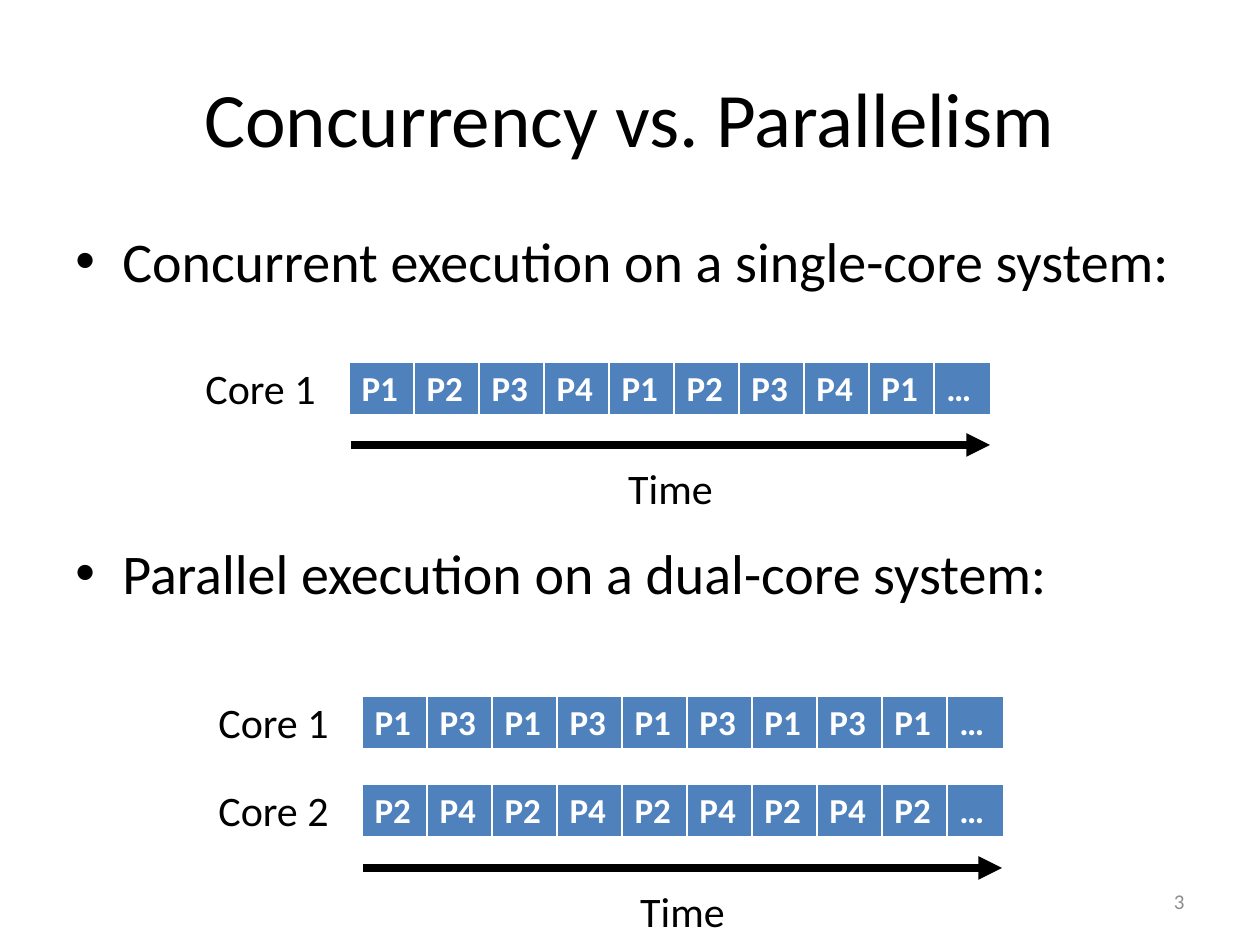
from lxml import etree
from pptx import Presentation
from pptx import util as u
from pptx.dml.color import RGBColor
from pptx.enum import shapes, text
from pptx.oxml import ns

BLACK = RGBColor(0, 0, 0)
WHITE = RGBColor(255, 255, 255)
GREY = RGBColor(0x8C, 0x8C, 0x8C)
BLUE = RGBColor(0x4F, 0x81, 0xBD)
LEFT, MID, RIGHT = text.PP_ALIGN.LEFT, text.PP_ALIGN.CENTER, text.PP_ALIGN.RIGHT
TOP, HALF = text.MSO_ANCHOR.TOP, text.MSO_ANCHOR.MIDDLE


def px(n):
    return u.Emu(round(n * 914400 / 126))


def write(frame, lines, size=24, color=BLACK, bold=False, align=LEFT, anchor=TOP, wrap=True):
    frame.word_wrap = wrap
    frame.vertical_anchor = anchor
    for i, line in enumerate(lines.split("\n")):
        para = frame.add_paragraph() if i else frame.paragraphs[0]
        para.alignment = align
        run = para.add_run()
        run.text = line
        run.font.name = "Calibri"
        run.font.size = u.Pt(size)
        run.font.bold = bold
        run.font.color.rgb = color


deck = Presentation()
deck.slide_width, deck.slide_height = px(1260), px(945)
slide = deck.slides.add_slide(deck.slide_layouts[6])
items = slide.shapes

title = items.add_textbox(px(63), px(38), px(1134), px(157))
write(title.text_frame, "Concurrency vs. Parallelism", size=44, align=MID, anchor=HALF)

body = items.add_textbox(px(63), px(220), px(1134), px(624))
write(body.text_frame, "Concurrent execution on a single-core system:\n"
      "Parallel execution on a dual-core system:", size=32)
for para, gap in zip(body.text_frame.paragraphs, (6, 140)):
    para.space_before = u.Pt(gap)
    prop = para._p.get_or_add_pPr()
    prop.set("marL", str(px(47)))
    prop.set("indent", str(-px(47)))
    etree.SubElement(prop, ns.qn("a:buFont"), typeface="Arial")
    etree.SubElement(prop, ns.qn("a:buChar"), char="•")

page = items.add_textbox(px(903), px(876), px(294), px(50))
write(page.text_frame, "3", size=12, color=GREY, align=RIGHT, anchor=HALF)

rows = [
    ("Core 1", 349, 362, "P1 P2 P3 P4 P1 P2 P3 P4 P1 …"),
    ("Core 1", 362, 696, "P1 P3 P1 P3 P1 P3 P1 P3 P1 …"),
    ("Core 2", 362, 784, "P2 P4 P2 P4 P2 P4 P2 P4 P2 …"),
]
for core, x, y, jobs in rows:
    label = items.add_textbox(px(x - 156), px(y - 6), px(136), px(63))
    write(label.text_frame, core, wrap=False)
    jobs = jobs.split()
    grid = items.add_table(1, len(jobs), px(x), px(y), px(642), px(52)).table
    grid.horz_banding = False
    for i, job in enumerate(jobs):
        grid.columns[i].width = px(57 if job == "…" else 65)
        cell = grid.cell(0, i)
        cell.fill.solid()
        cell.fill.fore_color.rgb = BLUE
        write(cell.text_frame, job, size=20, color=WHITE, bold=True)
        prop = cell._tc.get_or_add_tcPr()
        for k, (side, wide) in enumerate((("L", 1), ("R", 1), ("T", 1), ("B", 3))):
            edge = etree.Element(ns.qn("a:ln" + side), w=str(u.Pt(wide)))
            fill = etree.SubElement(edge, ns.qn("a:solidFill"))
            etree.SubElement(fill, ns.qn("a:srgbClr"), val=str(WHITE))
            prop.insert(k, edge)

for x, y in ((351, 445), (363, 868)):
    axis = items.add_connector(shapes.MSO_CONNECTOR.STRAIGHT, px(x), px(y), px(x + 639), px(y))
    axis.line.color.rgb = BLACK
    axis.line.width = u.Pt(4.5)
    etree.SubElement(axis.line._get_or_add_ln(), ns.qn("a:tailEnd"), type="triangle")
    etree.SubElement(axis._element.spPr, ns.qn("a:effectLst"))
    label = items.add_textbox(px(x + 264), px(y + 11), px(111), px(63))
    write(label.text_frame, "Time", align=MID, wrap=False)

deck.save("out.pptx")
